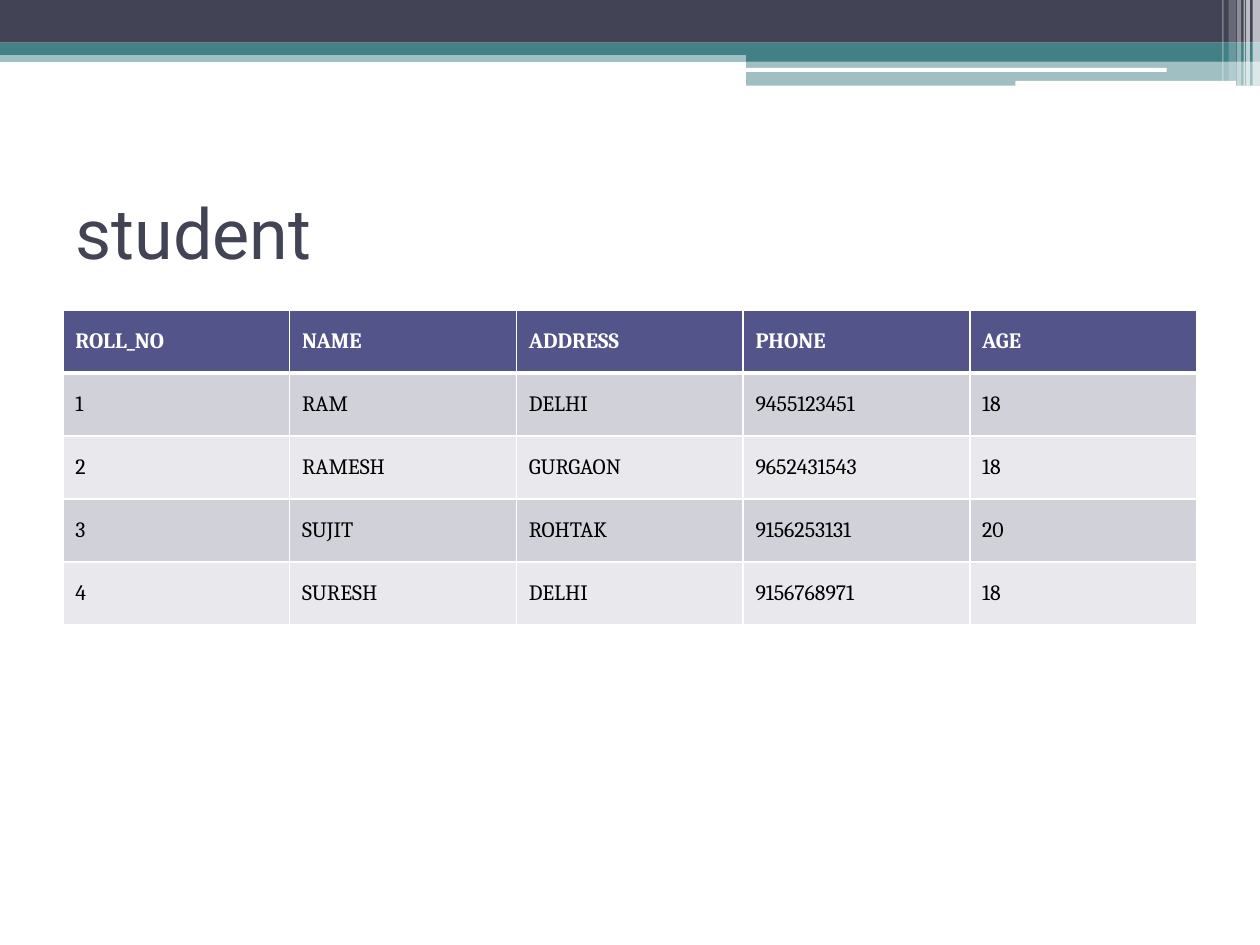
from lxml.etree import SubElement
from pptx import Presentation
from pptx.dml.color import RGBColor
from pptx.enum.shapes import MSO_SHAPE
from pptx.enum.text import MSO_ANCHOR, PP_ALIGN
from pptx.oxml.ns import qn
from pptx.util import Cm, Pt

WHITE = RGBColor(0xFF, 0xFF, 0xFF)
BLACK = RGBColor(0, 0, 0)
SLATE = RGBColor(0x42, 0x44, 0x56)
TEAL = RGBColor(0x43, 0x80, 0x86)
INDIGO = RGBColor(0x53, 0x54, 0x8A)
BANDS = RGBColor(0xD1, 0xD1, 0xDA), RGBColor(0xE9, 0xE9, 0xED)

TITLE = "student"
ROWS = [
    ("ROLL_NO", "NAME", "ADDRESS", "PHONE", "AGE"),
    ("1", "RAM", "DELHI", "9455123451", "18"),
    ("2", "RAMESH", "GURGAON", "9652431543", "18"),
    ("3", "SUJIT", "ROHTAK", "9156253131", "20"),
    ("4", "SURESH", "DELHI", "9156768971", "18"),
]

# left, top, width, height, colour, opacity in percent
BARS = [
    (0, 1.02, 25.4, 0.23, TEAL, 50),
    (0, 0, 25.4, 0.86, SLATE, 100),
    (0, 0.86, 25.4, 0.25, TEAL, 100),
    (15.04, 0.99, 10.36, 0.25, TEAL, 100),
    (15.04, 1.22, 10.36, 0.51, TEAL, 50),
]
ROUNDED_BARS = [
    (15.01, 1.37, 8.51, 0.08, WHITE, 100),
    (20.47, 1.63, 4.45, 0.1, WHITE, 100),
]
STRIPES = [
    (25.25, 0, 0.15, 1.73, WHITE, 65),
    (25.12, 0, 0.08, 1.73, WHITE, 65),
    (25.07, 0, 0.03, 1.73, WHITE, 60),
    (24.94, 0, 0.08, 1.73, WHITE, 40),
    (24.77, 0, 0.15, 1.63, WHITE, 20),
    (24.64, 0, 0.03, 1.63, WHITE, 30),
]
COL_W, ROW_H = 4.57, 1.25


def add_bar(s, kind, left, top, width, height, color, opacity):
    sp = s.shapes.add_shape(kind, Cm(left), Cm(top), Cm(width), Cm(height))
    sp.shadow.inherit = False
    sp.fill.solid()
    sp.fill.fore_color.rgb = color
    sp.line.fill.background()
    if opacity < 100:
        clr = sp.fill._xPr.find(".//" + qn("a:srgbClr"))
        SubElement(clr, qn("a:alpha"), val=str(opacity * 1000))


def set_borders(cell, widths):
    tcPr = cell._tc.get_or_add_tcPr()
    for i, (side, width) in enumerate(widths.items()):
        ln = tcPr.makeelement(qn("a:ln" + side), {"w": str(Pt(width))})
        fill = SubElement(ln, qn("a:solidFill"))
        SubElement(fill, qn("a:srgbClr"), val=str(WHITE))
        tcPr.insert(i, ln)


def fill_cell(cell, text, row):
    header = row == 0
    cell.text = text
    cell.vertical_anchor = MSO_ANCHOR.MIDDLE
    cell.margin_left = cell.margin_right = Cm(0.25)
    cell.margin_top = cell.margin_bottom = Cm(0.38)
    cell.fill.solid()
    cell.fill.fore_color.rgb = INDIGO if header else BANDS[(row - 1) % 2]
    font = cell.text_frame.paragraphs[0].font
    font.name, font.size, font.bold = "Cambria", Pt(12.5), header
    font.color.rgb = WHITE if header else BLACK
    set_borders(cell, {"L": 1, "R": 1, "T": 3 if row == 1 else 1, "B": 3 if header else 1})


def main():
    prs = Presentation()
    prs.slide_width, prs.slide_height = Cm(25.4), Cm(19.05)
    s = prs.slides.add_slide(prs.slide_layouts[5])

    for kind, bars in (
        (MSO_SHAPE.RECTANGLE, BARS),
        (MSO_SHAPE.ROUNDED_RECTANGLE, ROUNDED_BARS),
        (MSO_SHAPE.RECTANGLE, STRIPES),
    ):
        for bar in bars:
            add_bar(s, kind, *bar)

    title = s.shapes.title
    title.left, title.top, title.width, title.height = Cm(1.27), Cm(3.18), Cm(22.86), Cm(2.97)
    tf = title.text_frame
    tf.text = TITLE
    tf.vertical_anchor = MSO_ANCHOR.MIDDLE
    p = tf.paragraphs[0]
    p.alignment = PP_ALIGN.LEFT
    p.font.name, p.font.size = "Roboto", Pt(40)
    p.font.color.rgb = SLATE

    n_rows, n_cols = len(ROWS), len(ROWS[0])
    table = s.shapes.add_table(
        n_rows, n_cols, Cm(1.27), Cm(6.25), Cm(n_cols * COL_W), Cm(n_rows * ROW_H)
    ).table
    for r, row in enumerate(ROWS):
        for c, text in enumerate(row):
            fill_cell(table.cell(r, c), text, r)

    prs.save("out.pptx")


if __name__ == "__main__":
    main()
